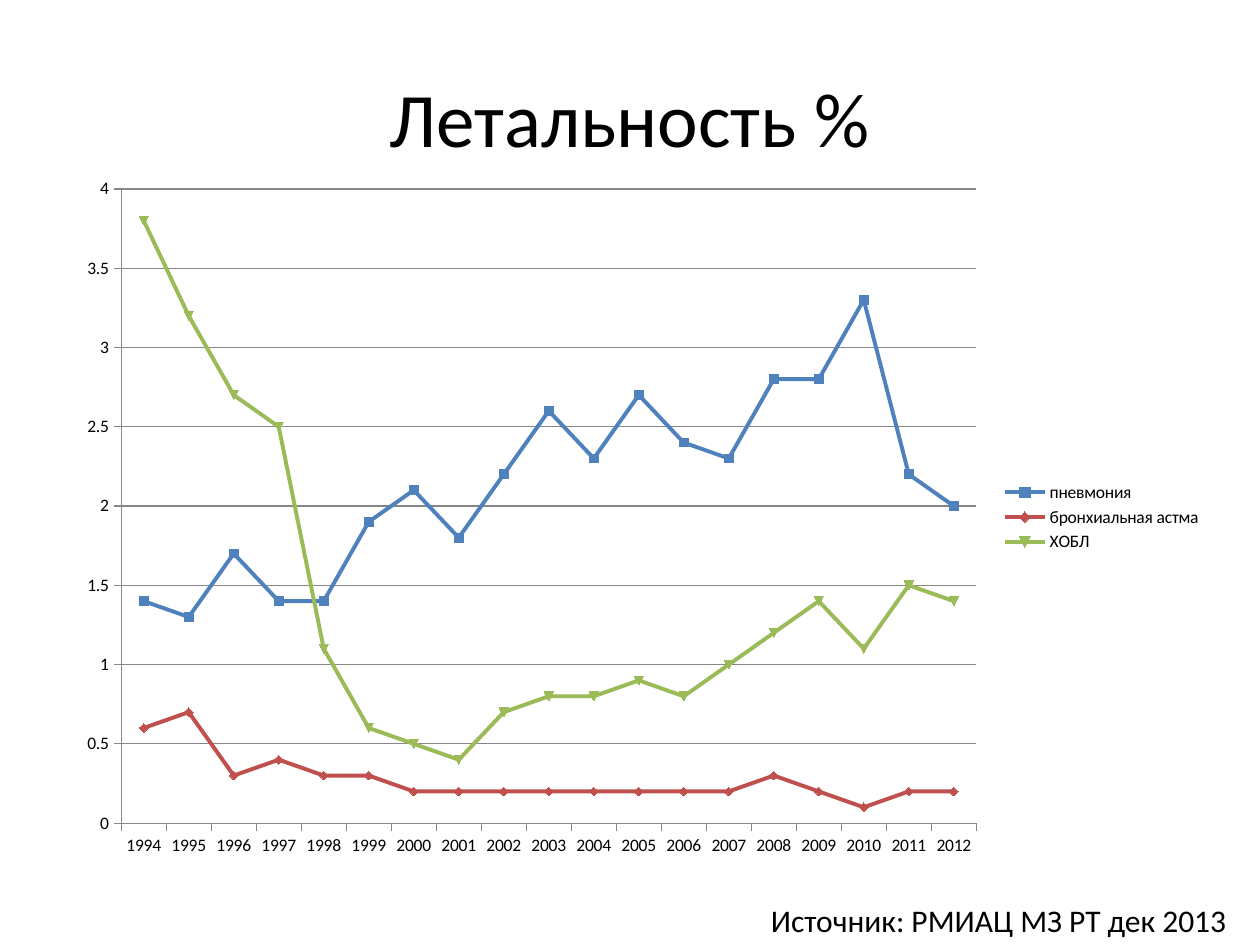
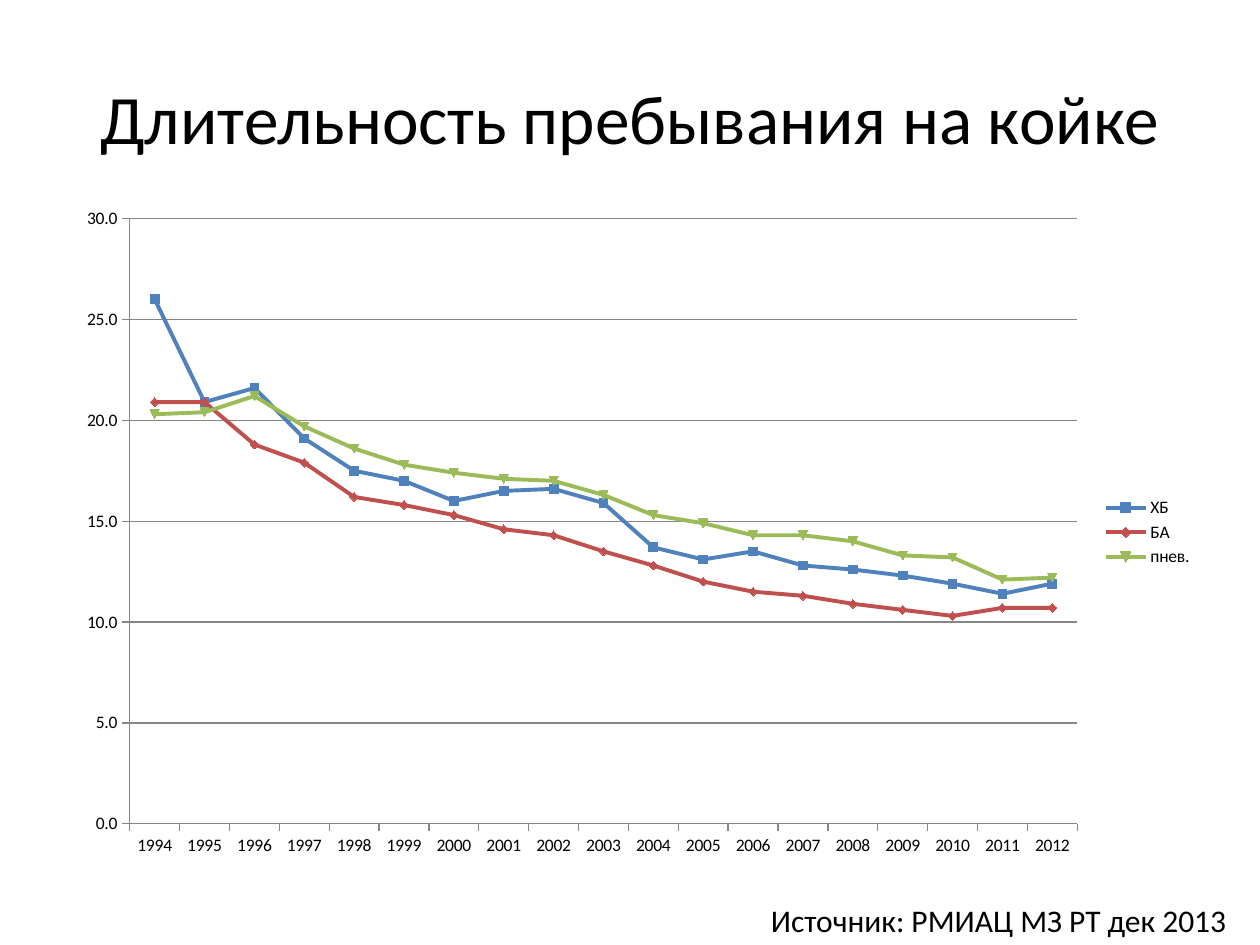
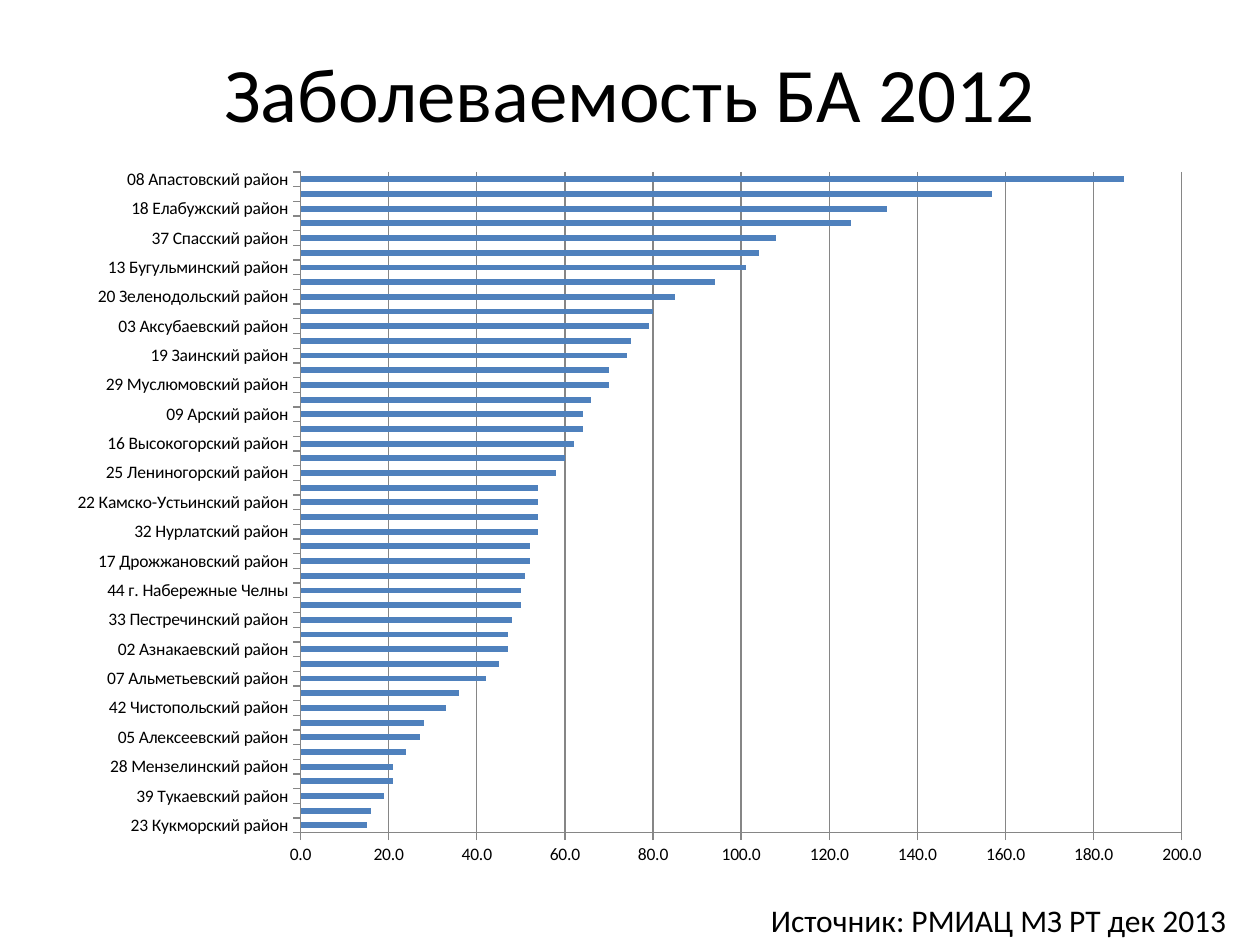
from dataclasses import dataclass

import pptx
import pptx.chart.data
import pptx.dml.color
import pptx.enum.chart
import pptx.enum.text
import pptx.util

EMU_PER_PX = 9144
FONT = "Calibri"
BLACK = "000000"
AXIS_GREY = "868686"
SERIES_COLOURS = ("4F81BD", "C0504D", "9BBB59")
SOURCE_TEXT = "Источник: РМИАЦ МЗ РТ дек 2013"
YEARS = tuple(str(year) for year in range(1994, 2013))
LINE = pptx.enum.chart.XL_CHART_TYPE.LINE_MARKERS
BAR = pptx.enum.chart.XL_CHART_TYPE.BAR_CLUSTERED


@dataclass(frozen=True)
class Box:
    left: int
    top: int
    width: int
    height: int

    def emu(self) -> tuple[int, ...]:
        return tuple(px(length) for length in (self.left, self.top, self.width, self.height))


@dataclass(frozen=True)
class ChartSlide:
    title: str
    title_size: float
    title_box: Box
    chart_box: Box
    chart_type: int
    number_format: str
    value_maximum: float
    value_step: float
    categories: tuple[str, ...]
    series: dict[str, tuple[float, ...]]


TITLE_BOX = Box(50, 30, 900, 125)
SOURCE_BOX = Box(602, 710, 386, 40)

DISTRICT_INCIDENCE = {
    "23 Кукморский район": 15,
    "27 Менделеевский район": 16,
    "39 Тукаевский район": 19,
    "38 Тетюшский район": 21,
    "28 Мензелинский район": 21,
    "15 Верхнеуслонский район": 24,
    "05 Алексеевский район": 27,
    "40 Тюлячинский район": 28,
    "42 Чистопольский район": 33,
    "31 Новошешминский район": 36,
    "07 Альметьевский район": 42,
    "35 Сабинский район": 45,
    "02 Азнакаевский район": 47,
    "12 Балтасинский район": 47,
    "33 Пестречинский район": 48,
    "26 Мамадышский район": 50,
    "44 г. Набережные Челны": 50,
    "14 Буинский район": 51,
    "17 Дрожжановский район": 52,
    "10 Атнинский район": 52,
    "32 Нурлатский район": 54,
    "41 Черемшанский район": 54,
    "22 Камско-Устьинский район": 54,
    "36 Сармановский район": 54,
    "25 Лениногорский район": 58,
    "04 Актанышский район": 60,
    "16 Высокогорский район": 62,
    "11 Бавлинский район": 64,
    "09 Арский район": 64,
    "01 Агрызский район": 66,
    "29 Муслюмовский район": 70,
    "43 Ютазинский район": 70,
    "19 Заинский район": 74,
    "21 Кайбицкий район": 75,
    "03 Аксубаевский район": 79,
    "06 Алькеевский район": 80,
    "20 Зеленодольский район": 85,
    "45 г. Казань": 94,
    "13 Бугульминский район": 101,
    "30 Нижнекамский район": 104,
    "37 Спасский район": 108,
    "24 Лаишевский район": 125,
    "18 Елабужский район": 133,
    "34 Рыбнослободский район": 157,
    "08 Апастовский район": 187,
}

SLIDES = (
    ChartSlide(
        "Летальность %", 44, TITLE_BOX, Box(51, 131, 913, 559), LINE, "General", 4, 0.5, YEARS,
        {
            "пневмония": (1.4, 1.3, 1.7, 1.4, 1.4, 1.9, 2.1, 1.8, 2.2, 2.6,
                          2.3, 2.7, 2.4, 2.3, 2.8, 2.8, 3.3, 2.2, 2),
            "бронхиальная астма": (0.6, 0.7, 0.3, 0.4, 0.3, 0.3, 0.2, 0.2, 0.2, 0.2,
                                   0.2, 0.2, 0.2, 0.2, 0.3, 0.2, 0.1, 0.2, 0.2),
            "ХОБЛ": (3.8, 3.2, 2.7, 2.5, 1.1, 0.6, 0.5, 0.4, 0.7, 0.8,
                     0.8, 0.9, 0.8, 1, 1.2, 1.4, 1.1, 1.5, 1.4),
        },
    ),
    ChartSlide(
        "Длительность пребывания на койке", 39.6, TITLE_BOX, Box(51, 155, 906, 535),
        LINE, "0.0", 30, 5, YEARS,
        {
            "ХБ": (26, 20.9, 21.6, 19.1, 17.5, 17, 16, 16.5, 16.6, 15.9,
                   13.7, 13.1, 13.5, 12.8, 12.6, 12.3, 11.9, 11.4, 11.9),
            "БА": (20.9, 20.9, 18.8, 17.9, 16.2, 15.8, 15.3, 14.6, 14.3, 13.5,
                   12.8, 12, 11.5, 11.3, 10.9, 10.6, 10.3, 10.7, 10.7),
            "пнев.": (20.3, 20.4, 21.2, 19.7, 18.6, 17.8, 17.4, 17.1, 17, 16.3,
                      15.3, 14.9, 14.3, 14.3, 14, 13.3, 13.2, 12.1, 12.2),
        },
    ),
    ChartSlide(
        "Заболеваемость БА 2012", 44, Box(50, 30, 900, 85), Box(43, 123, 929, 575),
        BAR, "0.0", 200, 20, tuple(DISTRICT_INCIDENCE),
        {"Series 1": tuple(DISTRICT_INCIDENCE.values())},
    ),
)


def px(length: int) -> int:
    return pptx.util.Emu(length * EMU_PER_PX)


def colour(hex_value: str) -> pptx.dml.color.RGBColor:
    return pptx.dml.color.RGBColor.from_string(hex_value)


def style_font(font, size: float) -> None:
    font.name = FONT
    font.size = pptx.util.Pt(size)
    font.color.rgb = colour(BLACK)


def style_line(line, hex_value: str, width: float) -> None:
    line.color.rgb = colour(hex_value)
    line.width = pptx.util.Pt(width)


def add_text(slide, text: str, box: Box, size: float):
    text_frame = slide.shapes.add_textbox(*box.emu()).text_frame
    text_frame.text = text
    style_font(text_frame.paragraphs[0].runs[0].font, size)
    return text_frame


def add_title(slide, content: ChartSlide) -> None:
    text_frame = add_text(slide, content.title, content.title_box, content.title_size)
    text_frame.word_wrap = True
    text_frame.vertical_anchor = pptx.enum.text.MSO_ANCHOR.MIDDLE
    text_frame.paragraphs[0].alignment = pptx.enum.text.PP_ALIGN.CENTER


def add_source(slide) -> None:
    text_frame = add_text(slide, SOURCE_TEXT, SOURCE_BOX, 18)
    text_frame.word_wrap = False
    text_frame.auto_size = pptx.enum.text.MSO_AUTO_SIZE.SHAPE_TO_FIT_TEXT


def style_axes(chart, content: ChartSlide) -> None:
    for axis in (chart.category_axis, chart.value_axis):
        axis.major_tick_mark = pptx.enum.chart.XL_TICK_MARK.OUTSIDE
        axis.minor_tick_mark = pptx.enum.chart.XL_TICK_MARK.NONE
        style_line(axis.format.line, AXIS_GREY, 0.75)
    chart.category_axis.has_major_gridlines = False
    value_axis = chart.value_axis
    value_axis.minimum_scale = 0
    value_axis.maximum_scale = content.value_maximum
    value_axis.major_unit = content.value_step
    value_axis.has_major_gridlines = True
    style_line(value_axis.major_gridlines.format.line, AXIS_GREY, 0.75)
    value_axis.tick_labels.number_format = content.number_format
    value_axis.tick_labels.number_format_is_linked = False


def style_series(chart, chart_type: int) -> None:
    for series, hex_value in zip(chart.plots[0].series, SERIES_COLOURS):
        if chart_type == LINE:
            series.smooth = False
            style_line(series.format.line, hex_value, 2.25)
            series.marker.format.fill.solid()
            series.marker.format.fill.fore_color.rgb = colour(hex_value)
            style_line(series.marker.format.line, hex_value, 0.75)
        else:
            series.format.fill.solid()
            series.format.fill.fore_color.rgb = colour(hex_value)


def add_chart(slide, content: ChartSlide) -> None:
    chart_data = pptx.chart.data.CategoryChartData()
    chart_data.categories = content.categories
    for name, values in content.series.items():
        chart_data.add_series(name, values)
    chart = slide.shapes.add_chart(content.chart_type, *content.chart_box.emu(), chart_data).chart
    chart.has_title = False
    style_font(chart.font, 10)
    chart.plots[0].vary_by_categories = False
    chart.has_legend = content.chart_type == LINE
    if chart.has_legend:
        chart.legend.position = pptx.enum.chart.XL_LEGEND_POSITION.RIGHT
        chart.legend.include_in_layout = False
    else:
        chart.plots[0].gap_width = 150
    style_axes(chart, content)
    style_series(chart, content.chart_type)


def main() -> None:
    """Build the three chart slides and save the presentation."""
    presentation = pptx.Presentation()
    presentation.slide_width = px(1000)
    presentation.slide_height = px(750)
    for content in SLIDES:
        slide = presentation.slides.add_slide(presentation.slide_layouts[6])
        add_title(slide, content)
        add_source(slide)
        add_chart(slide, content)
    presentation.save("out.pptx")


if __name__ == "__main__":
    main()
